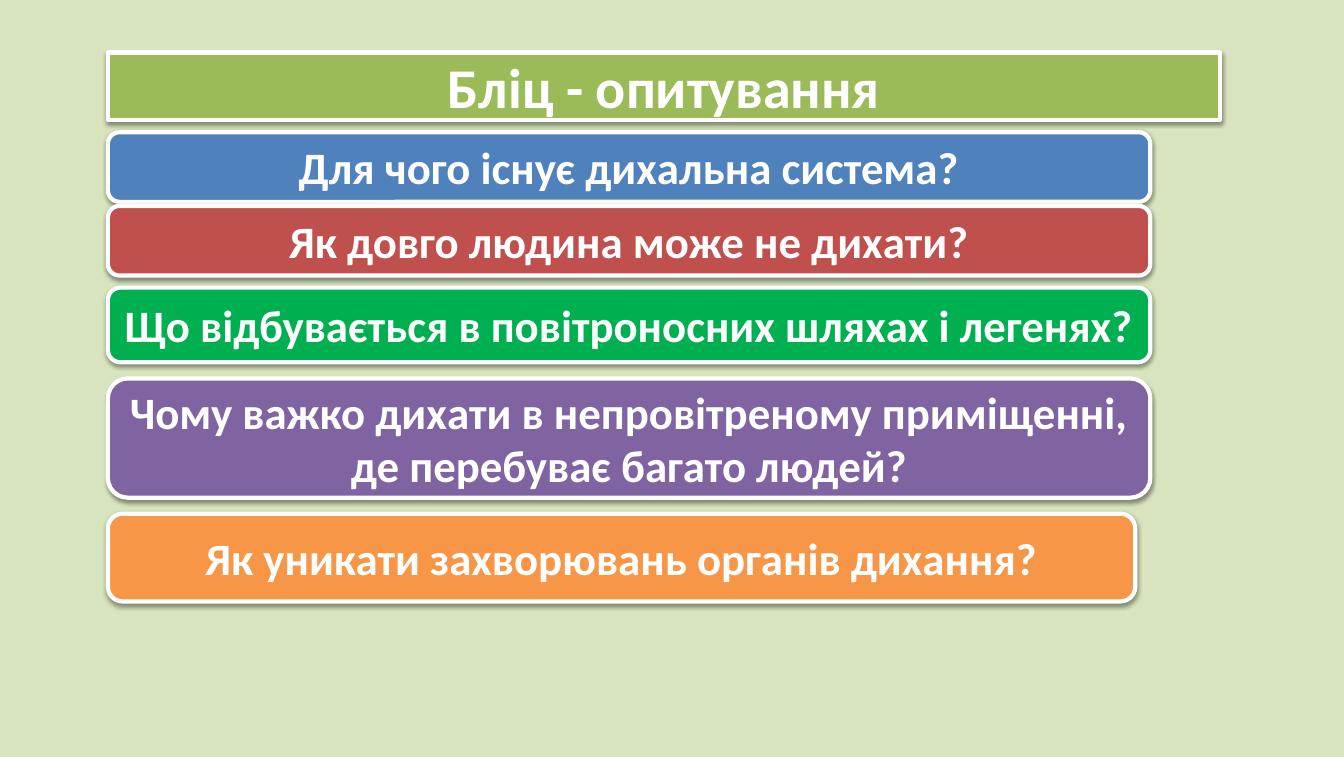
from pptx import Presentation
from pptx.dml.color import RGBColor as RGB
from pptx.enum.shapes import MSO_SHAPE as SHAPE
from pptx.enum.text import MSO_ANCHOR as ANCHOR, MSO_AUTO_SIZE as AUTO, PP_ALIGN as ALIGN
from pptx.oxml import parse_xml
from pptx.oxml.ns import nsdecls
from pptx.util import Pt

# Content: text, fill name, then top, width and height in points
TITLE = ("Бліц - опитування", "title", 37.4, 793.4, 48.2)
QUESTIONS = [
    ("Для чого існує дихальна система?", "blue", 94.3, 743.8, 49.7),
    ("Як довго людина може не дихати?", "red", 146.9, 743.8, 49.7),
    ("Що відбувається в повітроносних шляхах і легенях?", "green", 205.2, 743.8, 53.3),
    ("Чому важко дихати в непровітреному приміщенні, де перебуває багато людей?",
     "purple", 270, 743.8, 85),
    ("Як уникати захворювань органів дихання?", "orange", 366.5, 733, 62.6),
]

THEME = {
    "background": "D7E4BD", "light": "FFFFFF", "title": "9BBB59",
    "blue": "4F81BD", "red": "C0504D", "green": "00B050",
    "purple": "8064A2", "orange": "F79646",
    "font": "Calibri", "title_size": 40, "question_size": 32,
}
SLIDE_W, SLIDE_H = 959, 540
LEFT, BORDER = 77, 3
SHADOW = (
    f'<a:effectLst {nsdecls("a")}>'
    f'<a:outerShdw blurRad="{Pt(3.1)}" dist="{Pt(1.6)}" dir="5400000" rotWithShape="0">'
    '<a:srgbClr val="000000"><a:alpha val="38000"/></a:srgbClr>'
    '</a:outerShdw></a:effectLst>'
)


def color(name):
    return RGB.from_string(THEME[name])


def set_all(target, values):
    for name, value in values.items():
        setattr(target, name, value)


def style_banner(sp, item, size):
    text, fill, top, width, height = item
    set_all(sp, {"left": Pt(LEFT), "top": Pt(top), "width": Pt(width), "height": Pt(height)})

    # Fill, white border and soft shadow
    sp.fill.solid()
    sp.fill.fore_color.rgb = color(fill)
    sp.line.color.rgb = color("light")
    sp.line.width = Pt(BORDER)
    sp.element.spPr.append(parse_xml(SHADOW))

    # Centred bold text
    tf = sp.text_frame
    set_all(tf, {"word_wrap": True, "auto_size": AUTO.NONE, "vertical_anchor": ANCHOR.MIDDLE})
    p = tf.paragraphs[0]
    p.alignment = ALIGN.CENTER
    r = p.add_run()
    r.text = text
    set_all(r.font, {"name": THEME["font"], "size": Pt(size), "bold": True})
    r.font.color.rgb = color("light")


def main():
    prs = Presentation()
    set_all(prs, {"slide_width": Pt(SLIDE_W), "slide_height": Pt(SLIDE_H)})
    s = prs.slides.add_slide(prs.slide_layouts.get_by_name("Title Only"))
    s.background.fill.solid()
    s.background.fill.fore_color.rgb = color("background")

    # Title banner
    style_banner(s.shapes.title, TITLE, THEME["title_size"])

    # Question banners
    for item in QUESTIONS:
        sp = s.shapes.add_shape(SHAPE.ROUNDED_RECTANGLE, 0, 0, 0, 0)
        style_banner(sp, item, THEME["question_size"])

    prs.save("out.pptx")


if __name__ == "__main__":
    main()
